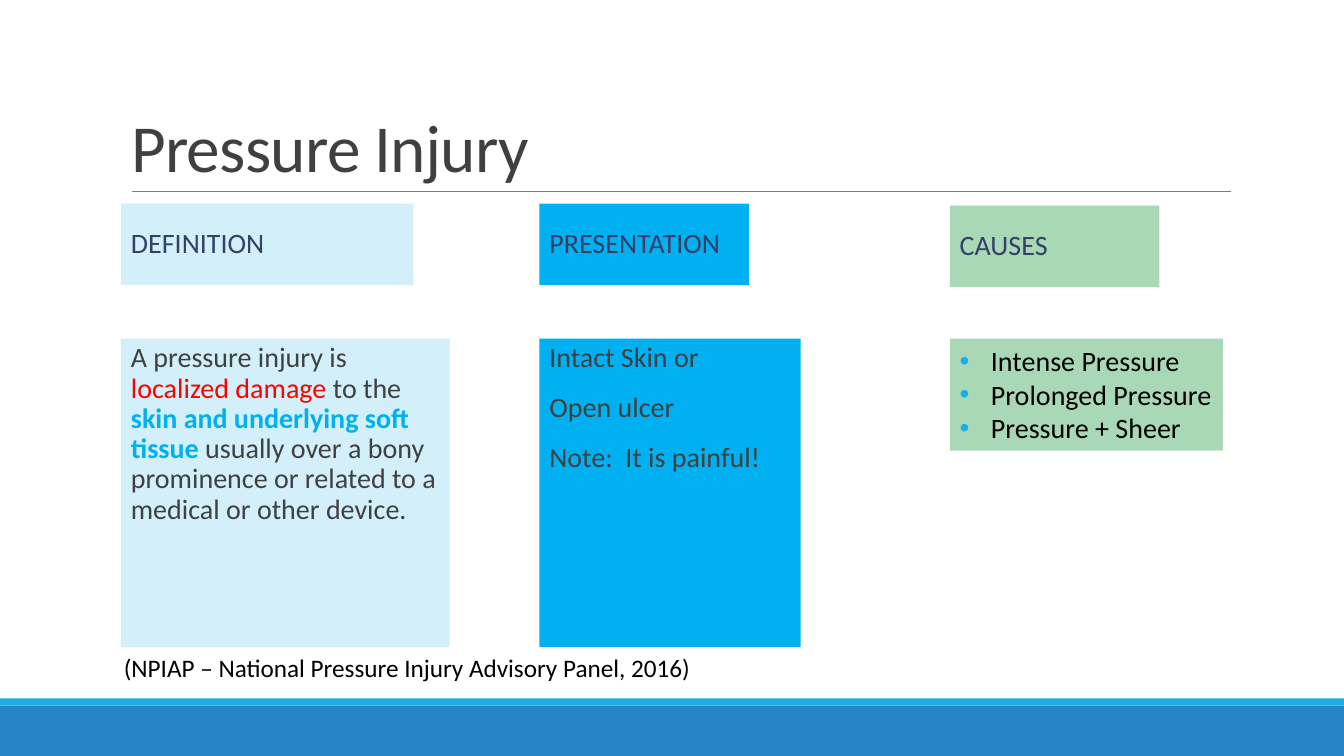
"""Build the Pressure Injury slide: definition, presentation and causes."""
from lxml import etree
from pptx import Presentation
from pptx.dml.color import RGBColor
from pptx.enum.shapes import MSO_CONNECTOR, MSO_SHAPE
from pptx.enum.text import MSO_ANCHOR, MSO_AUTO_SIZE, PP_ALIGN
from pptx.oxml.ns import qn
from pptx.util import Inches, Pt

RECTANGLE = MSO_SHAPE.RECTANGLE
STRAIGHT = MSO_CONNECTOR.STRAIGHT
TOP, MIDDLE, BOTTOM = MSO_ANCHOR.TOP, MSO_ANCHOR.MIDDLE, MSO_ANCHOR.BOTTOM
LEFT = PP_ALIGN.LEFT
NO_FIT, GROW = MSO_AUTO_SIZE.NONE, MSO_AUTO_SIZE.SHAPE_TO_FIT_TEXT
FONT = "Calibri"
TITLE_ONLY = 5

COLORS = {
    "band": "2683C6",
    "accent": "1CADE4",
    "rule": "808080",
    "text": "404040",
    "heading": "344068",
    "black": "000000",
    "red": "FF0000",
    "pale": "D2EFFA",
    "bright": "00B0F0",
    "green": "A9D8B7",
}

DEFINITION = [[
    ("A pressure injury is ", "text", False),
    ("localized damage", "red", False),
    (" to the ", "text", False),
    ("skin and underlying soft tissue ", "bright", True),
    ("usually over a bony prominence or related to a medical or other device.", "text", False),
]]
PRESENTATION = [[(line, "text", False)]
                for line in ("Intact Skin or", "Open ulcer", "Note:  It is painful!")]
CAUSES = [[(line, "black", False)]
          for line in ("Intense Pressure", "Prolonged Pressure", "Pressure + Sheer")]


def color(name):
    return RGBColor.from_string(COLORS[name])


def add_box(slide, left, top, width, height, fill):
    box = slide.shapes.add_shape(
        RECTANGLE, Inches(left), Inches(top), Inches(width), Inches(height))
    box.shadow.inherit = False
    box.fill.solid()
    box.fill.fore_color.rgb = color(fill)
    box.line.fill.background()
    return box


def add_rule(slide, left, right, y):
    rule = slide.shapes.add_connector(
        STRAIGHT, Inches(left), Inches(y), Inches(right), Inches(y))
    rule.line.color.rgb = color("rule")
    rule.line.width = Pt(0.5)
    etree.SubElement(rule._element.spPr, qn("a:effectLst"))


def add_run(paragraph, text, size, color_name, bold=False):
    run = paragraph.add_run()
    run.text = text
    run.font.name = FONT
    run.font.size = Pt(size)
    run.font.bold = bold
    run.font.color.rgb = color(color_name)
    return run


def add_bullet(paragraph):
    properties = paragraph._p.get_or_add_pPr()
    properties.set("marL", str(Inches(0.31)))
    properties.set("indent", str(-Inches(0.31)))
    bullet_color = etree.SubElement(properties, qn("a:buClr"))
    etree.SubElement(bullet_color, qn("a:srgbClr"), val=COLORS["accent"])
    etree.SubElement(properties, qn("a:buFont"), typeface="Arial")
    etree.SubElement(properties, qn("a:buChar"), char="•")


def write(shape, paragraphs, anchor, size=20, bulleted=False):
    frame = shape.text_frame
    frame.word_wrap = True
    frame.auto_size = GROW if bulleted else NO_FIT
    frame.vertical_anchor = anchor
    for index, runs in enumerate(paragraphs):
        paragraph = frame.add_paragraph() if index else frame.paragraphs[0]
        paragraph.alignment = LEFT
        if bulleted:
            add_bullet(paragraph)
        else:
            paragraph.line_spacing = 0.9
            paragraph.space_before = Pt(12)
            paragraph.space_after = Pt(2)
        for text, color_name, bold in runs:
            add_run(paragraph, text, size, color_name, bold)


def add_heading(slide, text, left, top, width, fill):
    heading = add_box(slide, left, top, width, 0.81, fill)
    write(heading, [[(text, "heading", False)]], MIDDLE)


def add_body(slide, paragraphs, left, width, height, fill, bulleted=False):
    body = add_box(slide, left, 3.36, width, height, fill)
    write(body, paragraphs, TOP, bulleted=bulleted)
    if not bulleted:
        body.text_frame.margin_right = 0


def format_title(slide, text):
    title = slide.shapes.title
    title.left, title.top = Inches(1.2), Inches(0.31)
    title.width, title.height = Inches(11), Inches(1.59)
    frame = title.text_frame
    frame.auto_size = NO_FIT
    frame.vertical_anchor = BOTTOM
    paragraph = frame.paragraphs[0]
    paragraph.alignment = LEFT
    paragraph.line_spacing = 0.85
    run = add_run(paragraph, text, 48, "text")
    run.font._element.set("spc", "-50")


def add_citation(slide, text):
    citation = slide.shapes.add_textbox(
        Inches(1.13), Inches(6.42), Inches(5.87), Inches(0.4))
    citation.text_frame.word_wrap = False
    citation.text_frame.auto_size = GROW
    add_run(citation.text_frame.paragraphs[0], text, 18, "black")


def main():
    presentation = Presentation()
    presentation.slide_width = Inches(13.33)
    presentation.slide_height = Inches(7.5)
    slide = presentation.slides.add_slide(presentation.slide_layouts[TITLE_ONLY])

    add_box(slide, 0, 7, 13.33, 0.5, "band")
    add_box(slide, 0, 6.93, 13.33, 0.07, "accent")
    add_rule(slide, 1.31, 12.21, 1.9)
    format_title(slide, "Pressure Injury")

    add_heading(slide, "DEFINITION", 1.2, 2.02, 2.9, "pale")
    add_body(slide, DEFINITION, 1.2, 3.26, 3.06, "pale")
    add_heading(slide, "PRESENTATION", 5.35, 2.02, 2.08, "bright")
    add_body(slide, PRESENTATION, 5.35, 2.59, 3.06, "bright")
    add_heading(slide, "CAUSES", 9.42, 2.04, 2.08, "green")
    add_body(slide, CAUSES, 9.42, 2.71, 1.11, "green", bulleted=True)
    add_citation(slide, "(NPIAP – National Pressure Injury Advisory Panel, 2016)")

    presentation.save("out.pptx")


if __name__ == "__main__":
    main()
